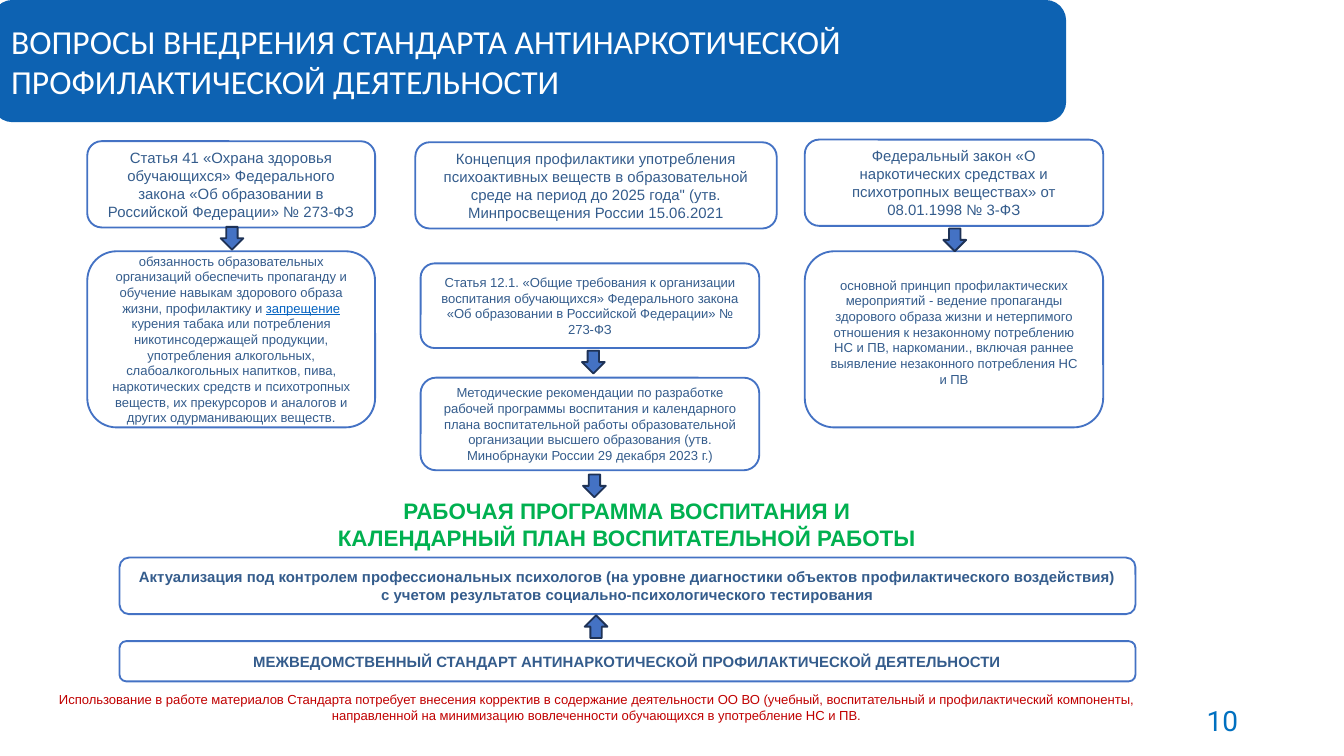
from pptx import Presentation
from pptx.dml.color import RGBColor
from pptx.enum import shapes, text
from pptx.util import Cm, Pt

BLUE, INK, WHITE = "4472C4", "345C8C", "FFFFFF"
CENTER = text.PP_ALIGN.CENTER


def rgb(value):
    return RGBColor.from_string(value)


def write(shape, content, size=8, color=INK, font="Arial", bold=False,
          align=CENTER, anchor=text.MSO_ANCHOR.MIDDLE, link=None):
    """Fill the shape with one paragraph per line; link is a word shown underlined."""
    frame = shape.text_frame
    frame.word_wrap = True
    frame.vertical_anchor = anchor
    for number, line in enumerate(content.split("\n")):
        paragraph = frame.add_paragraph() if number else frame.paragraphs[0]
        paragraph.alignment = align
        before, word, after = line.partition(link) if link else (line, "", "")
        for part in filter(None, (before, word, after)):
            run = paragraph.add_run()
            run.text = part
            run.font.size = Pt(size)
            run.font.name = font
            run.font.bold = bold
            run.font.underline = part == link
            run.font.color.rgb = rgb("0563C1" if part == link else color)


prs = Presentation()
prs.slide_width, prs.slide_height = Cm(25.4), Cm(14.29)
slide = prs.slides.add_slide(prs.slide_layouts[6])

# Page number
page_number = slide.shapes.add_textbox(Cm(17.93), Cm(13.23), Cm(5.72), Cm(0.76))
write(page_number, "10", size=15, color="0070C0", font="Roboto",
      align=text.PP_ALIGN.RIGHT)

# Title, documents and programme: left, top, width, height, fill, outline, text, format
column_1, column_2, column_3 = (1.65, 5.44), (7.95, 6.4), (15.21, 5.64)
blocks = [
    (-0.15, 0, 20.3, 2.31, "0D62B2", None,
     "ВОПРОСЫ ВНЕДРЕНИЯ СТАНДАРТА АНТИНАРКОТИЧЕСКОЙ ПРОФИЛАКТИЧЕСКОЙ ДЕЯТЕЛЬНОСТИ",
     dict(size=18, color=WHITE, font="Calibri", align=text.PP_ALIGN.LEFT)),
    (column_1[0], 2.67, column_1[1], 1.63, WHITE, BLUE,
     "Статья 41 «Охрана здоровья обучающихся» Федерального закона "
     "«Об образовании в Российской Федерации» № 273-ФЗ", {}),
    (column_1[0], 4.75, column_1[1], 3.33, WHITE, BLUE,
     "обязанность образовательных организаций обеспечить пропаганду и обучение "
     "навыкам здорового образа жизни, профилактику и запрещение курения табака "
     "или потребления никотинсодержащей продукции, употребления алкогольных, "
     "слабоалкогольных напитков, пива, наркотических средств и психотропных "
     "веществ, их прекурсоров и аналогов и других одурманивающих веществ.",
     dict(size=7, link="запрещение")),
    (7.85, 2.69, 6.83, 1.63, WHITE, BLUE,
     "Концепция профилактики употребления психоактивных веществ в образовательной "
     "среде на период до 2025 года\" (утв. Минпросвещения России 15.06.2021", {}),
    (column_2[0], 4.98, column_2[1], 1.6, WHITE, BLUE,
     "Статья 12.1. «Общие требования к организации воспитания обучающихся» "
     "Федерального закона «Об образовании в Российской Федерации» № 273-ФЗ",
     dict(size=7)),
    (column_2[0], 7.14, column_2[1], 1.75, WHITE, BLUE,
     "Методические рекомендации по разработке рабочей программы воспитания и "
     "календарного плана воспитательной работы образовательной организации "
     "высшего образования (утв. Минобрнауки России 29 декабря 2023 г.)",
     dict(size=7)),
    (column_3[0], 2.64, column_3[1], 1.63, WHITE, BLUE,
     "Федеральный закон «О наркотических средствах и психотропных веществах» "
     "от 08.01.1998 № 3-ФЗ", {}),
    (1.7, 9.37, 20.3, 1.09, WHITE, None,
     "РАБОЧАЯ ПРОГРАММА ВОСПИТАНИЯ И\nКАЛЕНДАРНЫЙ ПЛАН ВОСПИТАТЕЛЬНОЙ РАБОТЫ",
     dict(size=12, color="00B050", bold=True)),
    (2.26, 10.54, 19.2, 1.07, WHITE, BLUE,
     "Актуализация под контролем профессиональных психологов (на уровне диагностики "
     "объектов профилактического воздействия) с учетом результатов "
     "социально-психологического тестирования", dict(bold=True)),
    (2.26, 12.12, 19.2, 0.76, WHITE, BLUE,
     "МЕЖВЕДОМСТВЕННЫЙ СТАНДАРТ АНТИНАРКОТИЧЕСКОЙ ПРОФИЛАКТИЧЕСКОЙ ДЕЯТЕЛЬНОСТИ",
     dict(bold=True)),
    (column_3[0], 4.75, column_3[1], 3.33, WHITE, BLUE,
     "основной принцип профилактических мероприятий - ведение пропаганды здорового "
     "образа жизни и нетерпимого отношения к незаконному потреблению НС и ПВ, "
     "наркомании., включая раннее выявление незаконного потребления НС и ПВ",
     dict(size=7)),
]
for left, top, width, height, fill, outline, content, style in blocks:
    block = slide.shapes.add_shape(shapes.MSO_SHAPE.ROUNDED_RECTANGLE,
                                   Cm(left), Cm(top), Cm(width), Cm(height))
    block.shadow.inherit = False
    block.fill.solid()
    block.fill.fore_color.rgb = rgb(fill)
    if outline:
        block.line.color.rgb = rgb(outline)
        block.line.width = Pt(1)
    else:
        block.line.fill.background()
    write(block, content, **style)
# The principle, last in the list, sits a little above the middle
block.text_frame.margin_bottom = Cm(0.4)

# Arrows between the steps
for left, top, rotation in [(4.17, 4.29, 0), (17.83, 4.32, 0), (11, 6.63, 0),
                            (11.02, 8.97, 0), (11.05, 11.63, 180)]:
    arrow = slide.shapes.add_shape(shapes.MSO_SHAPE.DOWN_ARROW,
                                   Cm(left), Cm(top), Cm(0.43), Cm(0.43))
    arrow.rotation = rotation
    arrow.shadow.inherit = False
    arrow.fill.solid()
    arrow.fill.fore_color.rgb = rgb(BLUE)
    arrow.line.color.rgb = rgb("1E3256")
    arrow.line.width = Pt(1)

# Closing remark
remark = slide.shapes.add_textbox(Cm(0.36), Cm(12.95), Cm(21.82), Cm(0.86))
write(remark,
      "Использование в работе материалов Стандарта потребует внесения корректив в "
      "содержание деятельности ОО ВО (учебный, воспитательный и профилактический "
      "компоненты, направленной на минимизацию вовлеченности обучающихся в "
      "употребление НС и ПВ.",
      size=7, color="C00000", anchor=text.MSO_ANCHOR.TOP)

prs.save("out.pptx")
